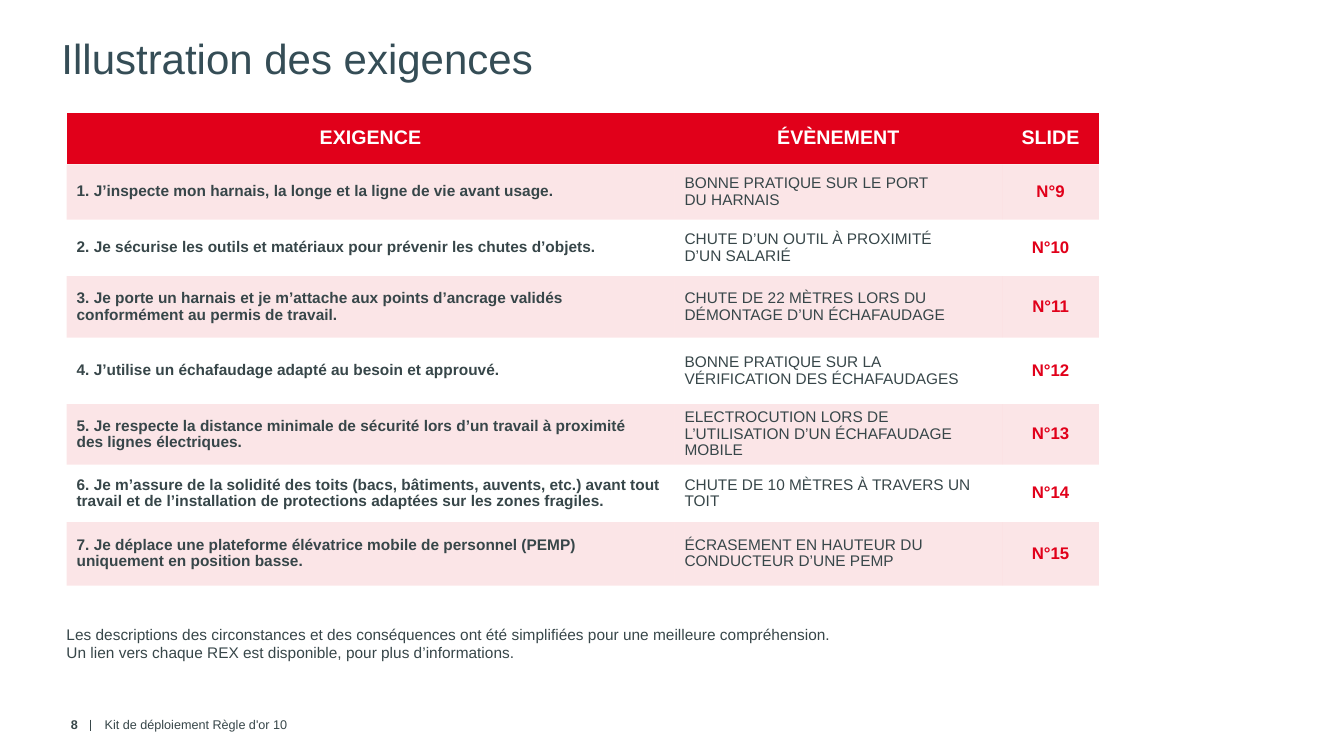
"""Build the slide that lists the safety requirements and their events."""
from lxml import etree
from pptx import Presentation
from pptx.dml.color import RGBColor
from pptx.enum.shapes import MSO_CONNECTOR
from pptx.enum.text import MSO_ANCHOR, MSO_AUTO_SIZE, PP_ALIGN
from pptx.oxml.ns import qn
from pptx.util import Inches, Pt

LEFT, CENTER, RIGHT = PP_ALIGN.LEFT, PP_ALIGN.CENTER, PP_ALIGN.RIGHT
TOP, MIDDLE = MSO_ANCHOR.TOP, MSO_ANCHOR.MIDDLE
NO_FIT = MSO_AUTO_SIZE.NONE
STRAIGHT = MSO_CONNECTOR.STRAIGHT
RED, GREY, SLATE, WHITE = "E1001A", "374649", "354D56", "FFFFFF"
PLAIN = "{2D5ABB26-0587-4C30-8999-92F81FD0307C}"


def color(code):
    return RGBColor.from_string(code)


def write(frame, text, size, code, bold=False, align=LEFT):
    frame.text = text
    frame.word_wrap = True
    for para in frame.paragraphs:
        para.alignment = align
        for run in para.runs:
            run.font.name = "Arial"
            run.font.size = Pt(size)
            run.font.bold = bold
            run.font.color.rgb = color(code)


prs = Presentation()
prs.slide_width, prs.slide_height = Inches(13.33), Inches(7.5)
slide = prs.slides.add_slide(prs.slide_layouts[5])

title = slide.shapes.title
title.left, title.top = Inches(0.51), Inches(0.27)
title.width, title.height = Inches(10.63), Inches(1.1)
write(title.text_frame, "Illustration des exigences", 30, SLATE)
title.text_frame.vertical_anchor = TOP
title.text_frame.auto_size = NO_FIT

rows = [
    ("EXIGENCE", "ÉVÈNEMENT", "SLIDE"),
    ("1. J’inspecte mon harnais, la longe et la ligne de vie avant usage.",
     "BONNE PRATIQUE SUR LE PORT\vDU HARNAIS", "N°9"),
    ("2. Je sécurise les outils et matériaux pour prévenir les chutes d’objets.",
     "CHUTE D’UN OUTIL À PROXIMITÉ\vD’UN SALARIÉ", "N°10"),
    ("3. Je porte un harnais et je m’attache aux points d’ancrage validés "
     "conformément au permis de travail.",
     "CHUTE DE 22 MÈTRES LORS DU DÉMONTAGE D’UN ÉCHAFAUDAGE", "N°11"),
    ("4. J’utilise un échafaudage adapté au besoin et approuvé.",
     "BONNE PRATIQUE SUR LA VÉRIFICATION DES ÉCHAFAUDAGES", "N°12"),
    ("5. Je respecte la distance minimale de sécurité lors d’un travail à "
     "proximité\vdes lignes électriques.",
     "ELECTROCUTION LORS DE L’UTILISATION D’UN ÉCHAFAUDAGE MOBILE", "N°13"),
    ("6. Je m’assure de la solidité des toits (bacs, bâtiments, auvents, etc.) "
     "avant tout travail et de l’installation de protections adaptées sur les "
     "zones fragiles.",
     "CHUTE DE 10 MÈTRES À TRAVERS UN TOIT", "N°14"),
    ("7. Je déplace une plateforme élévatrice mobile de personnel (PEMP) "
     "uniquement en position basse.",
     "ÉCRASEMENT EN HAUTEUR DU CONDUCTEUR D’UNE PEMP", "N°15"),
]
widths = [6.03, 3.25, 0.96]
heights = [0.51, 0.55, 0.56, 0.61, 0.66, 0.6, 0.57, 0.63]
looks = [(11, GREY, True, LEFT), (11, GREY, False, LEFT), (12, RED, True, CENTER)]
head = (14, WHITE, True, CENTER)

frame = slide.shapes.add_table(len(rows), len(widths), Inches(0.66), Inches(1.12),
                               Inches(sum(widths)), Inches(sum(heights)))
table = frame.table
table.horz_banding = False
table._tbl.tblPr.find(qn("a:tableStyleId")).text = PLAIN
for col, width in zip(table.columns, widths):
    col.width = Inches(width)
for r, (row, height) in enumerate(zip(rows, heights)):
    table.rows[r].height = Inches(height)
    for c, text in enumerate(row):
        cell = table.cell(r, c)
        cell.vertical_anchor = MIDDLE
        write(cell.text_frame, text, *(looks[c] if r else head))
        cell.text_frame.paragraphs[0].line_spacing = 0.96
        cell.fill.solid()
        cell.fill.fore_color.rgb = color(WHITE if r and r % 2 == 0 else RED)
        if r % 2:
            tint = cell._tc.tcPr.find(".//" + qn("a:srgbClr"))
            etree.SubElement(tint, qn("a:alpha"), val="10000")

note = slide.shapes.add_textbox(Inches(0.66), Inches(6.2), Inches(10.63), Inches(0.37))
body = note.text_frame
body.margin_left = body.margin_right = body.margin_top = body.margin_bottom = 0
write(body, "Les descriptions des circonstances et des conséquences ont été "
      "simplifiées pour une meilleure compréhension.\v"
      "Un lien vers chaque REX est disponible, pour plus d’informations.", 11, GREY)

feet = [(0.24, 0.63, "8", True, RIGHT),
        (0.94, 3.94, "Kit de déploiement Règle d'or 10", False, LEFT)]
for left, width, text, bold, align in feet:
    foot = slide.shapes.add_textbox(Inches(left), Inches(7.05), Inches(width), Inches(0.28))
    write(foot.text_frame, text, 9, GREY, bold, align)
    foot.text_frame.vertical_anchor = MIDDLE

bar = slide.shapes.add_connector(STRAIGHT, Inches(0.9), Inches(7.14), Inches(0.9), Inches(7.25))
bar.line.color.rgb = color(GREY)
bar.line.width = Pt(1)
etree.SubElement(bar._element.spPr, qn("a:effectLst"))

prs.save("out.pptx")
